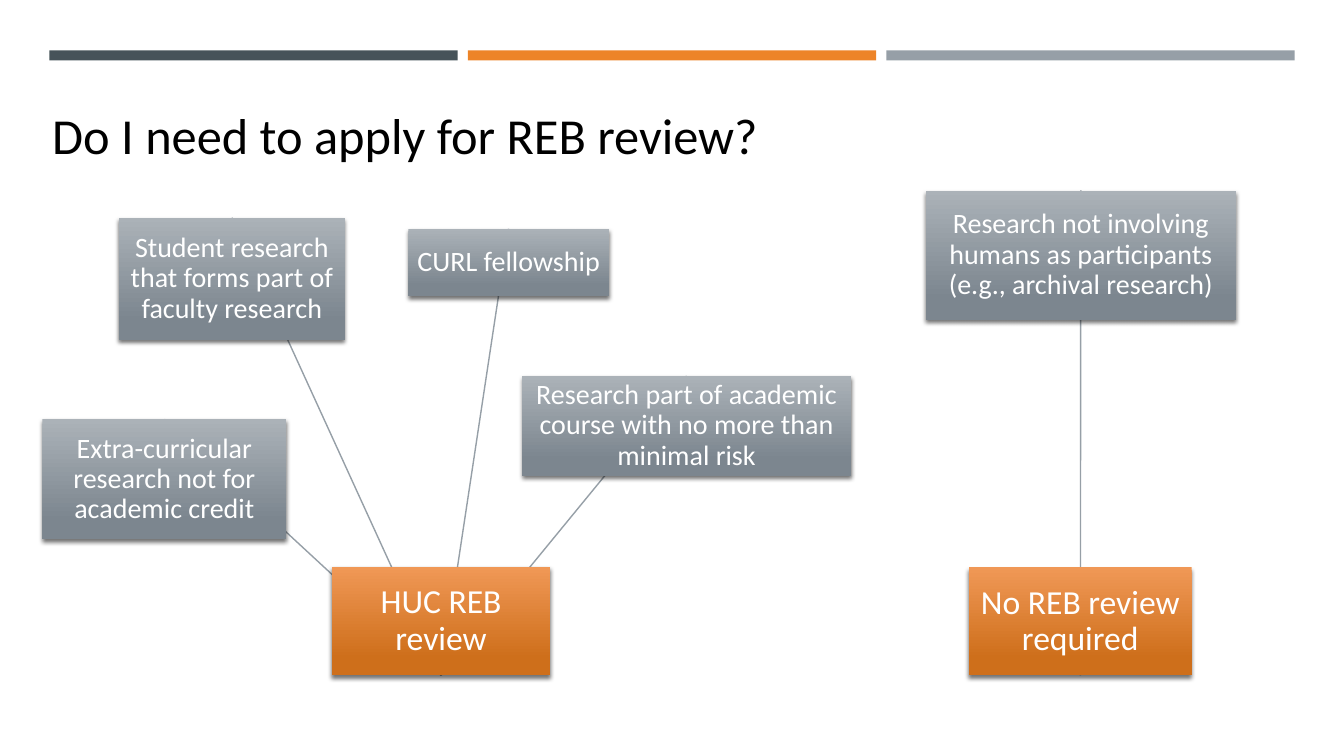
from lxml.etree import SubElement
from pptx import Presentation
from pptx.dml.color import RGBColor
from pptx.enum.shapes import MSO_CONNECTOR, MSO_SHAPE
from pptx.enum.text import MSO_ANCHOR, MSO_AUTO_SIZE, PP_ALIGN
from pptx.oxml import parse_xml
from pptx.oxml.ns import nsdecls, qn
from pptx.util import Inches, Pt

FONT = "Calibri"
BLACK = RGBColor(0x00, 0x00, 0x00)
WHITE = RGBColor(0xFF, 0xFF, 0xFF)
SLATE = RGBColor(0x46, 0x53, 0x59)
ORANGE = RGBColor(0xED, 0x84, 0x28)
GRAY = RGBColor(0x96, 0x9F, 0xA7)
ORANGE_FADE = (RGBColor(0xF0, 0x98, 0x56), RGBColor(0xCE, 0x6F, 0x1B))
GRAY_FADE = (RGBColor(0xAB, 0xB2, 0xB8), RGBColor(0x7C, 0x86, 0x8F))

SHADOW = (
    f'<a:effectLst {nsdecls("a")}>'
    '<a:outerShdw blurRad="38100" dist="25400" dir="5400000" rotWithShape="0">'
    '<a:srgbClr val="000000"><a:alpha val="55000"/></a:srgbClr>'
    '</a:outerShdw></a:effectLst>'
)


class ReviewSlide:
    """Style and drawing methods for the current slide."""

    def __init__(self, slide):
        self.shapes = slide.shapes

    def rectangle(self, left, top, width, height):
        shape = self.shapes.add_shape(
            MSO_SHAPE.RECTANGLE, Inches(left), Inches(top), Inches(width), Inches(height))
        shape.line.fill.background()
        return shape

    def bar(self, left, color):
        bar = self.rectangle(left, 0.5, 4.05, 0.1)
        bar.shadow.inherit = False
        bar.fill.solid()
        bar.fill.fore_color.rgb = color

    def style_text(self, paragraph, size, color):
        paragraph.font.name = FONT
        paragraph.font.size = Pt(size)
        paragraph.font.color.rgb = color

    def title(self, text):
        box = self.shapes.add_textbox(Inches(0.42), Inches(0.98), Inches(10.43), Inches(0.71))
        frame = box.text_frame
        frame.word_wrap = True
        frame.auto_size = MSO_AUTO_SIZE.SHAPE_TO_FIT_TEXT
        frame.text = text
        self.style_text(frame.paragraphs[0], 36, BLACK)

    def box(self, text, position, fade, size, inset):
        box = self.rectangle(*position)
        box.fill.gradient()
        box.fill.gradient_angle = 270
        for stop, color, place in zip(box.fill.gradient_stops, fade, (0, 0.84)):
            stop.color.rgb = color
            stop.position = place
        box._element.spPr.append(parse_xml(SHADOW))
        frame = box.text_frame
        frame.word_wrap = True
        frame.vertical_anchor = MSO_ANCHOR.MIDDLE
        frame.margin_left = frame.margin_right = Inches(inset)
        frame.margin_top = frame.margin_bottom = Inches(inset)
        frame.text = text
        paragraph = frame.paragraphs[0]
        paragraph.alignment = PP_ALIGN.CENTER
        paragraph.line_spacing = 0.9
        self.style_text(paragraph, size, WHITE)
        return box

    def outcome(self, text, position):
        return self.box(text, position, ORANGE_FADE, 24, 0.02)

    def research_case(self, text, position):
        return self.box(text, position, GRAY_FADE, 20, 0.01)

    def link(self, outcome, case):
        line = self.shapes.add_connector(MSO_CONNECTOR.STRAIGHT, 0, 0, 0, 0)
        line.begin_connect(outcome, 2)
        line.end_connect(case, 0)
        line.line.color.rgb = GRAY
        line.line.width = Pt(1)
        SubElement(line._element.spPr, qn("a:effectLst"))
        # Lines run behind their outcome and case boxes
        outcome._element.addprevious(line._element)


def main():
    prs = Presentation()
    prs.slide_width, prs.slide_height = Inches(13.33), Inches(7.5)
    page = ReviewSlide(prs.slides.add_slide(prs.slide_layouts[6]))

    # Header bars and title
    for column, color in enumerate((SLATE, ORANGE, GRAY)):
        page.bar(0.49 + 4.15 * column, color)
    page.title("Do I need to apply for REB review?")

    # Each outcome with the research cases that lead to it
    decisions = [
        ("HUC REB review", (3.29, 5.62, 2.17, 1.08), [
            ("Research part of academic course with no more than minimal risk",
             (5.18, 3.73, 3.26, 0.99)),
            ("CURL fellowship", (4.05, 2.27, 1.99, 0.67)),
            ("Student research that forms part of faculty research",
             (1.18, 2.16, 2.24, 1.21)),
            ("Extra-curricular research not for academic credit",
             (0.42, 4.16, 2.42, 1.19)),
        ]),
        ("No REB review required", (9.61, 5.63, 2.21, 1.07), [
            ("Research not involving humans as participants (e.g., archival research)",
             (9.18, 1.89, 3.08, 1.28)),
        ]),
    ]
    for outcome_text, outcome_position, cases in decisions:
        outcome = page.outcome(outcome_text, outcome_position)
        for case_text, case_position in cases:
            page.link(outcome, page.research_case(case_text, case_position))

    prs.save("out.pptx")


if __name__ == "__main__":
    main()
